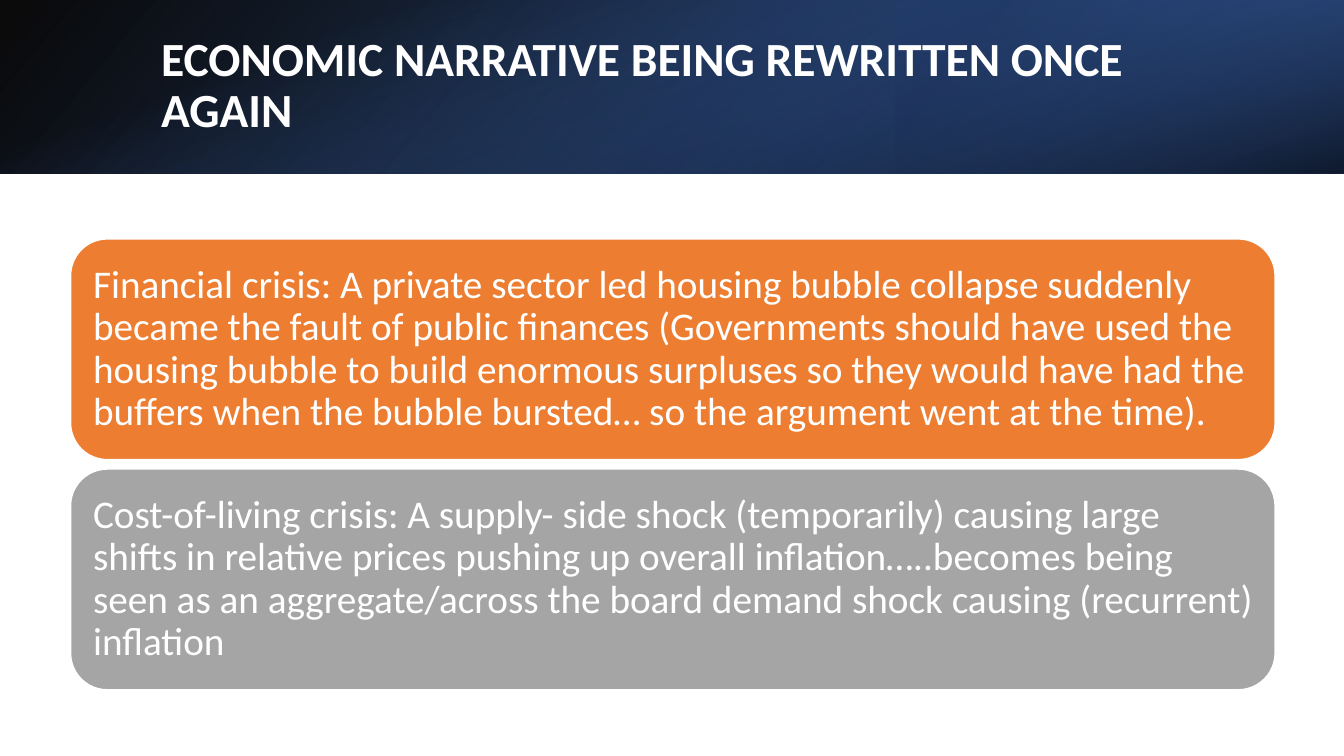
from dataclasses import dataclass

from lxml.etree import SubElement
from pptx import Presentation
from pptx.dml.color import RGBColor
from pptx.enum.shapes import MSO_SHAPE
from pptx.enum.text import MSO_ANCHOR, PP_ALIGN
from pptx.oxml.ns import qn
from pptx.util import Pt

COLORS = {
    "white": "FFFFFF",
    "black": "000000",
    "deep": "2F5597",
    "navy": "203864",
    "blue": "4472C4",
    "orange": "ED7D31",
    "gray": "A5A5A5",
}
SLIDE_W, SLIDE_H = 960, 540
BAND_H = 123.84
CARD_X, CARD_Y, CARD_W, CARD_H = 50.4, 170.64, 860.4, 157.68
CARD_STEP = 164.4


@dataclass(frozen=True)
class Stop:
    position: float
    color: str
    alpha: int


@dataclass(frozen=True)
class Layer:
    x: float
    y: float
    w: float
    h: float
    angle: int
    stops: tuple[Stop, Stop]
    rotation: int = 0
    flip: bool = False


@dataclass(frozen=True)
class Card:
    color: str
    text: str


LAYERS = (
    Layer(0, 0, SLIDE_W, BAND_H, 140,
          (Stop(0, "black", 96), Stop(1, "deep", 100)), flip=True),
    Layer(640, 0, 320, BAND_H, 320,
          (Stop(0.19, "navy", 68), Stop(1, "blue", 79)), rotation=180, flip=True),
    Layer((SLIDE_W - BAND_H) / 2, (BAND_H - SLIDE_W) / 2, BAND_H, SLIDE_W, 340,
          (Stop(0.23, "blue", 0), Stop(0.99, "black", 74)), rotation=90),
)
CARDS = (
    Card("orange", "Financial crisis: A private sector led housing bubble collapse suddenly "
         "became the fault of public finances (Governments should have used the housing "
         "bubble to build enormous surpluses so they would have had the buffers when the "
         "bubble bursted… so the argument went at the time)."),
    Card("gray", "Cost-of-living crisis: A supply- side shock (temporarily) causing large "
         "shifts in relative prices pushing up overall inflation…..becomes being seen as an "
         "aggregate/across the board demand shock causing (recurrent) inflation"),
)


def rgb(name: str) -> RGBColor:
    return RGBColor.from_string(COLORS[name])


def write(sp, text: str, *, size: float, bold: bool = False, color: str = "white",
          inset_x: float = 7.2, inset_y: float = 3.6) -> None:
    tf = sp.text_frame
    tf.word_wrap = True
    tf.vertical_anchor = MSO_ANCHOR.MIDDLE
    tf.margin_left = tf.margin_right = Pt(inset_x)
    tf.margin_top = tf.margin_bottom = Pt(inset_y)
    p = tf.paragraphs[0]
    p.alignment = PP_ALIGN.LEFT
    p.line_spacing = 0.9
    r = p.add_run()
    r.text = text
    r.font.name = "Calibri"
    r.font.size = Pt(size)
    r.font.bold = bold
    r.font.color.rgb = rgb(color)


def draw_layer(s, layer: Layer) -> None:
    sp = s.shapes.add_shape(MSO_SHAPE.RECTANGLE, Pt(layer.x), Pt(layer.y),
                            Pt(layer.w), Pt(layer.h))
    sp.shadow.inherit = False
    sp.line.fill.background()
    sp.rotation = layer.rotation
    if layer.flip:
        sp.element.spPr.find(qn("a:xfrm")).set("flipH", "1")
    sp.fill.gradient()
    sp.fill.gradient_angle = 360 - layer.angle
    for gs, stop in zip(sp.fill.gradient_stops, layer.stops):
        gs.position = stop.position
        gs.color.rgb = rgb(stop.color)
    for clr, stop in zip(sp.element.spPr.iter(qn("a:srgbClr")), layer.stops):
        SubElement(clr, qn("a:alpha")).set("val", str(stop.alpha * 1000))


def draw_card(s, card: Card, y: float) -> None:
    sp = s.shapes.add_shape(MSO_SHAPE.ROUNDED_RECTANGLE, Pt(CARD_X), Pt(y),
                            Pt(CARD_W), Pt(CARD_H))
    sp.shadow.inherit = False
    sp.fill.solid()
    sp.fill.fore_color.rgb = rgb(card.color)
    sp.line.color.rgb = rgb("white")
    sp.line.width = Pt(1)
    write(sp, card.text, size=28, inset_x=8.4, inset_y=8.4)


def main() -> None:
    prs = Presentation()
    prs.slide_width, prs.slide_height = Pt(SLIDE_W), Pt(SLIDE_H)
    s = prs.slides.add_slide(prs.slide_layouts[6])
    for layer in LAYERS:
        draw_layer(s, layer)
    title = s.shapes.add_textbox(Pt(108), Pt(27.36), Pt(790.56), Pt(69.12))
    write(title, "ECONOMIC NARRATIVE BEING REWRITTEN ONCE AGAIN", size=34, bold=True)
    for i, card in enumerate(CARDS):
        draw_card(s, card, CARD_Y + i * CARD_STEP)
    prs.save("out.pptx")


if __name__ == "__main__":
    main()
